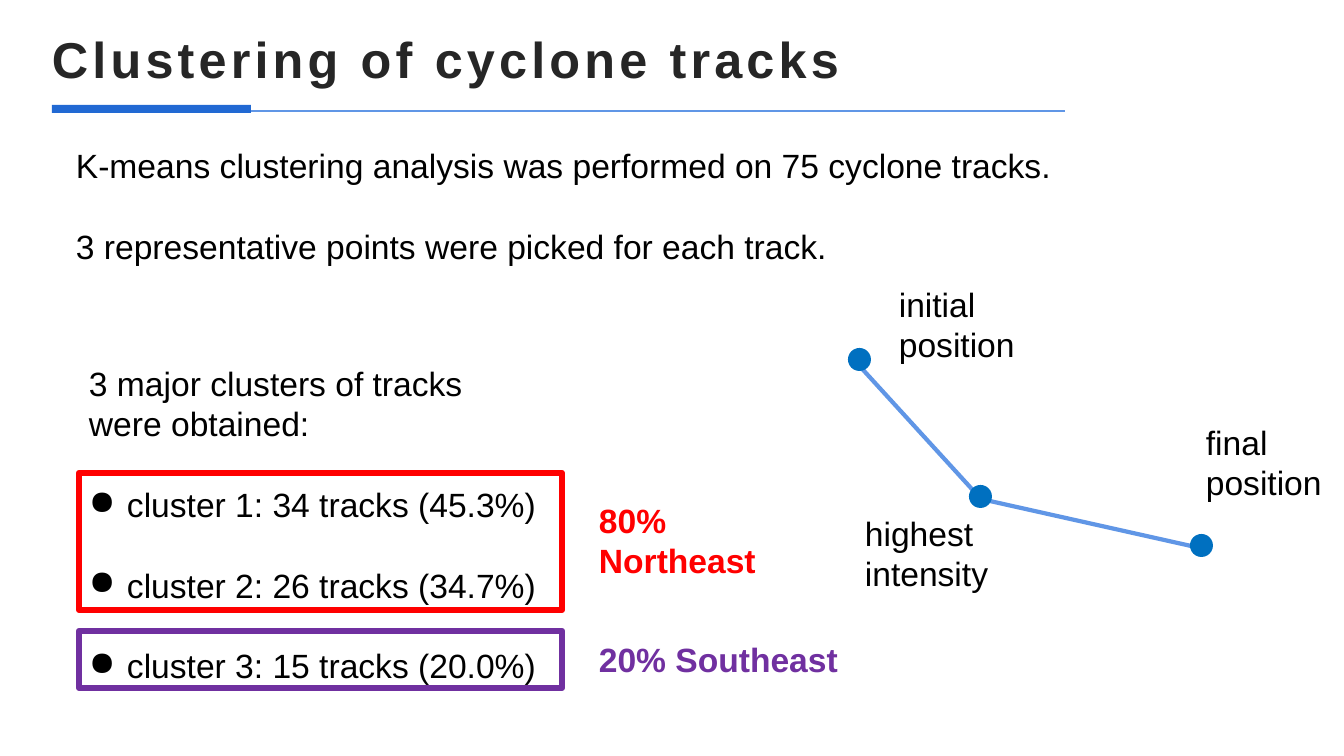
from itertools import pairwise

from lxml import etree
from pptx import Presentation
from pptx.dml.color import RGBColor
from pptx.enum.shapes import MSO_CONNECTOR, MSO_SHAPE
from pptx.enum.text import MSO_ANCHOR, MSO_AUTO_SIZE
from pptx.oxml.ns import qn
from pptx.util import Pt

PX = 914400 / 100.8
STRAIGHT = MSO_CONNECTOR.STRAIGHT
RECTANGLE = MSO_SHAPE.RECTANGLE
OVAL = MSO_SHAPE.OVAL
MIDDLE = MSO_ANCHOR.MIDDLE
GROW = MSO_AUTO_SIZE.SHAPE_TO_FIT_TEXT

BLACK = RGBColor(0x00, 0x00, 0x00)
CHARCOAL = RGBColor(0x26, 0x26, 0x26)
BAR_BLUE = RGBColor(0x21, 0x69, 0xD3)
LINE_BLUE = RGBColor(0x60, 0x96, 0xE6)
DOT_BLUE = RGBColor(0x00, 0x70, 0xC0)
RED = RGBColor(0xFF, 0x00, 0x00)
PURPLE = RGBColor(0x70, 0x30, 0xA0)

FONT = "Arial"
LINE_HEIGHT = Pt(28.8)
BULLET_INDENT = 38
DOT_SIZE = 23

TRACK = [(855, 361), (981, 499), (1200, 548)]
DOTS = [(848, 348), (969, 485), (1190, 534)]
POINT_LABELS = [
    (["initial position"], (889, 279, 147, 92)),
    (["highest", "intensity"], (855, 508, 162, 92)),
    (["final", "position"], (1196, 417, 147, 92)),
]
CLUSTERS = [
    "cluster 1: 34 tracks (45.3%)",
    "cluster 2: 26 tracks (34.7%)",
    "cluster 3: 15 tracks (20.0%)",
]
DIRECTIONS = [
    (["80%", "Northeast"], RED, (79, 473, 483, 137), (589, 495, 189, 92)),
    (["20% Southeast"], PURPLE, (79, 631, 483, 57), (589, 634, 287, 50)),
]


def px(*lengths):
    return [round(length * PX) for length in lengths]


def style_font(paragraph, size, color, bold):
    paragraph.font.name = FONT
    paragraph.font.size = Pt(size)
    paragraph.font.color.rgb = color
    paragraph.font.bold = bold


def add_text(slide, lines, box, color=BLACK, bold=False, gap=0):
    frame = slide.shapes.add_textbox(*px(*box)).text_frame
    frame.word_wrap = True
    frame.auto_size = GROW
    frame.text = "\n".join(lines)
    for index, paragraph in enumerate(frame.paragraphs):
        style_font(paragraph, 24, color, bold)
        paragraph.line_spacing = LINE_HEIGHT
        paragraph.space_before = gap if index else 0
    return frame


def add_bullet(paragraph):
    properties = paragraph._p.get_or_add_pPr()
    indent, = px(BULLET_INDENT)
    properties.set("marL", str(indent))
    properties.set("indent", str(-indent))
    bullet = etree.Element(qn("a:buChar"), char="●")
    properties.find(qn("a:defRPr")).addprevious(bullet)


def add_title(slide, text, box):
    frame = slide.shapes.add_textbox(*px(*box)).text_frame
    frame.word_wrap = True
    frame.vertical_anchor = MIDDLE
    frame.text = text
    paragraph = frame.paragraphs[0]
    style_font(paragraph, 36, CHARCOAL, True)
    paragraph.runs[0]._r.get_or_add_rPr().set("spc", "300")


def add_filled(slide, kind, box, color):
    shape = slide.shapes.add_shape(kind, *px(*box))
    shape.shadow.inherit = False
    shape.fill.solid()
    shape.fill.fore_color.rgb = color
    shape.line.fill.background()


def add_outline(slide, box, color):
    shape = slide.shapes.add_shape(RECTANGLE, *px(*box))
    shape.shadow.inherit = False
    shape.fill.background()
    shape.line.color.rgb = color
    shape.line.width = Pt(4.5)


def add_line(slide, start, end, width):
    connector = slide.shapes.add_connector(STRAIGHT, *px(*start, *end))
    connector.line.color.rgb = LINE_BLUE
    connector.line.width = Pt(width)
    etree.SubElement(connector._element.spPr, qn("a:effectLst"))


def main():
    presentation = Presentation()
    presentation.slide_width, presentation.slide_height = px(1344, 756)
    slide = presentation.slides.add_slide(presentation.slide_layouts[6])

    add_title(slide, "Clustering of cyclone tracks", (42, 19, 1210, 78))
    add_filled(slide, RECTANGLE, (52, 105, 199, 8), BAR_BLUE)
    add_line(slide, (251, 111), (1065, 111), 2)

    add_text(slide, [
        "K-means clustering analysis was performed on 75 cyclone tracks.",
        "3 representative points were picked for each track.",
    ], (66, 140, 1022, 132), gap=LINE_HEIGHT)

    for start, end in pairwise(TRACK):
        add_line(slide, start, end, 3)
    for left, top in DOTS:
        add_filled(slide, OVAL, (left, top, DOT_SIZE, DOT_SIZE), DOT_BLUE)
    for lines, box in POINT_LABELS:
        add_text(slide, lines, box)

    summary = add_text(
        slide,
        ["3 major clusters of tracks were obtained:", *CLUSTERS],
        (79, 358, 473, 376),
        gap=LINE_HEIGHT,
    )
    for paragraph in summary.paragraphs[1:]:
        add_bullet(paragraph)

    for lines, color, outline_box, label_box in DIRECTIONS:
        add_outline(slide, outline_box, color)
        add_text(slide, lines, label_box, color, bold=True)

    presentation.save("out.pptx")


if __name__ == "__main__":
    main()
